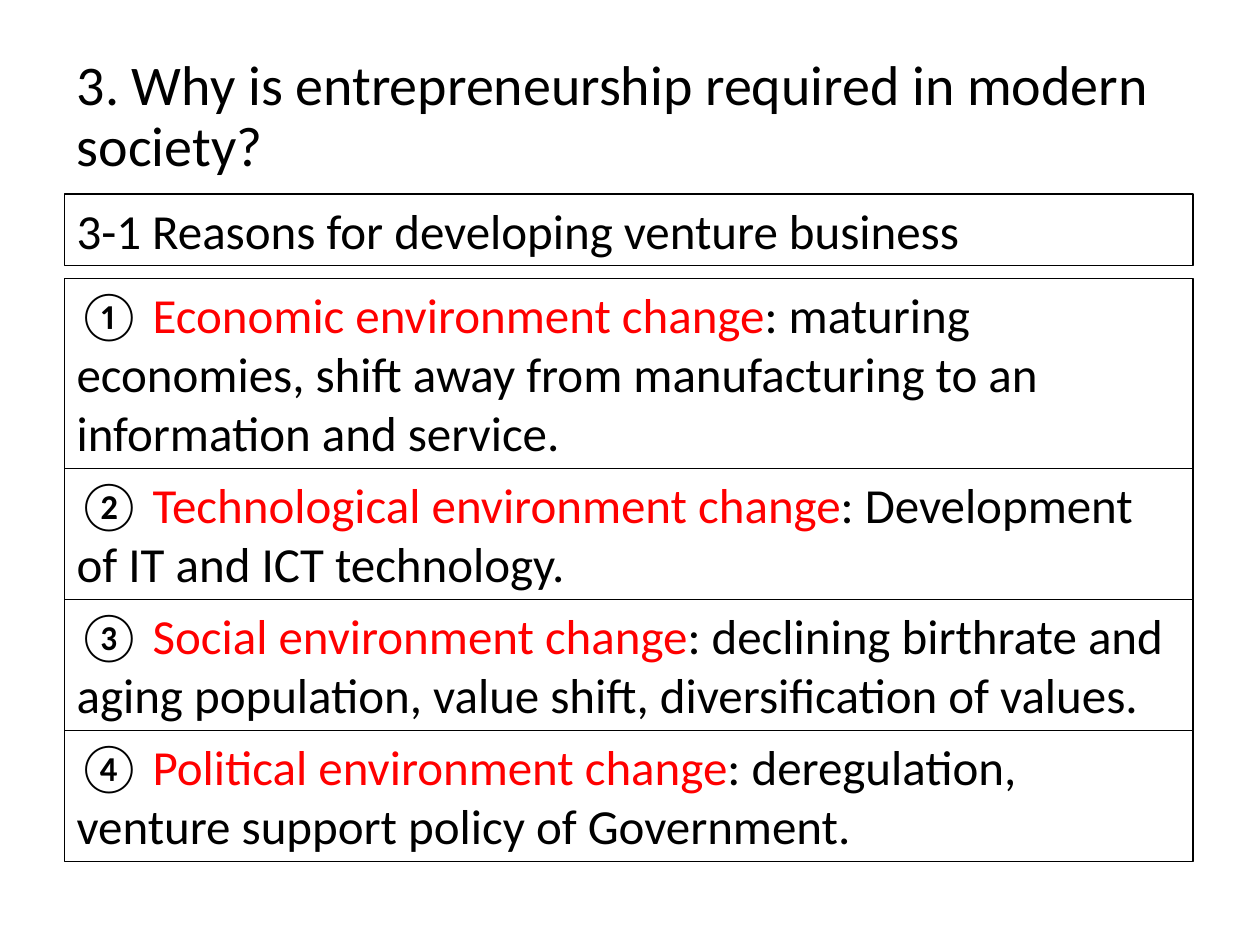
from dataclasses import dataclass

from pptx import Presentation
from pptx.dml.color import RGBColor
from pptx.enum.text import MSO_ANCHOR, MSO_AUTO_SIZE, PP_ALIGN
from pptx.util import Inches, Pt

LEFT, MIDDLE = PP_ALIGN.LEFT, MSO_ANCHOR.MIDDLE
GROW = MSO_AUTO_SIZE.SHAPE_TO_FIT_TEXT
COLORS = {"ink": "000000", "key": "FF0000"}
FONT = "Calibri"
EDGE, WIDE = 0.51, 8.96
ROW, PAD = 0.47, 0.1  # height of one text line, top and bottom margins


@dataclass
class Reason:
    mark: str
    key: str
    rest: str
    rows: int


REASONS = [
    Reason("①", "Economic", "maturing economies, shift away from manufacturing "
           "to an information and service.", 3),
    Reason("②", "Technological", "Development of IT and ICT technology.", 2),
    Reason("③", "Social", "declining birthrate and aging population, "
           "value shift, diversification of values.", 2),
    Reason("④", "Political", "deregulation, venture support policy "
           "of Government.", 2),
]


def color(name: str) -> RGBColor:
    return RGBColor.from_string(COLORS[name])


def style(para, size: int) -> None:
    para.alignment = LEFT
    para.font.name = FONT
    para.font.size = Pt(size)
    para.font.color.rgb = color("ink")


def add_title(slide, text: str) -> None:
    title = slide.shapes.title
    title.left, title.top = Inches(EDGE), Inches(0.4)
    title.width, title.height = Inches(8.98), Inches(1.07)
    frame = title.text_frame
    frame.text = text
    frame.vertical_anchor = MIDDLE
    para = frame.paragraphs[0]
    style(para, 32)
    para.line_spacing = 0.9


def add_box(slide, top: float, rows: int, parts: list[tuple[str, str]]) -> float:
    """Draw a framed text of colored parts and return its bottom edge."""
    high = PAD + ROW * rows
    box = slide.shapes.add_textbox(
        Inches(EDGE), Inches(top), Inches(WIDE), Inches(high))
    box.line.color.rgb = color("ink")
    box.line.width = Pt(0.75)
    frame = box.text_frame
    frame.word_wrap = True
    frame.auto_size = GROW
    para = frame.paragraphs[0]
    style(para, 28)
    for text, tone in parts:
        run = para.add_run()
        run.text = text
        run.font.color.rgb = color(tone)
    return top + high


def main() -> None:
    deck = Presentation()
    deck.slide_width, deck.slide_height = Inches(10), Inches(7.5)
    slide = deck.slides.add_slide(deck.slide_layouts[5])
    add_title(slide, "3. Why is entrepreneurship required in modern society?")
    end = add_box(slide, 1.54, 1,
                  [("3-1 Reasons for developing venture business", "ink")])
    top = end + PAD
    for item in REASONS:
        top = add_box(slide, top, item.rows, [
            (f"{item.mark} ", "ink"),
            (f"{item.key} environment change", "key"),
            (f": {item.rest}", "ink"),
        ])
    deck.save("out.pptx")


if __name__ == "__main__":
    main()
